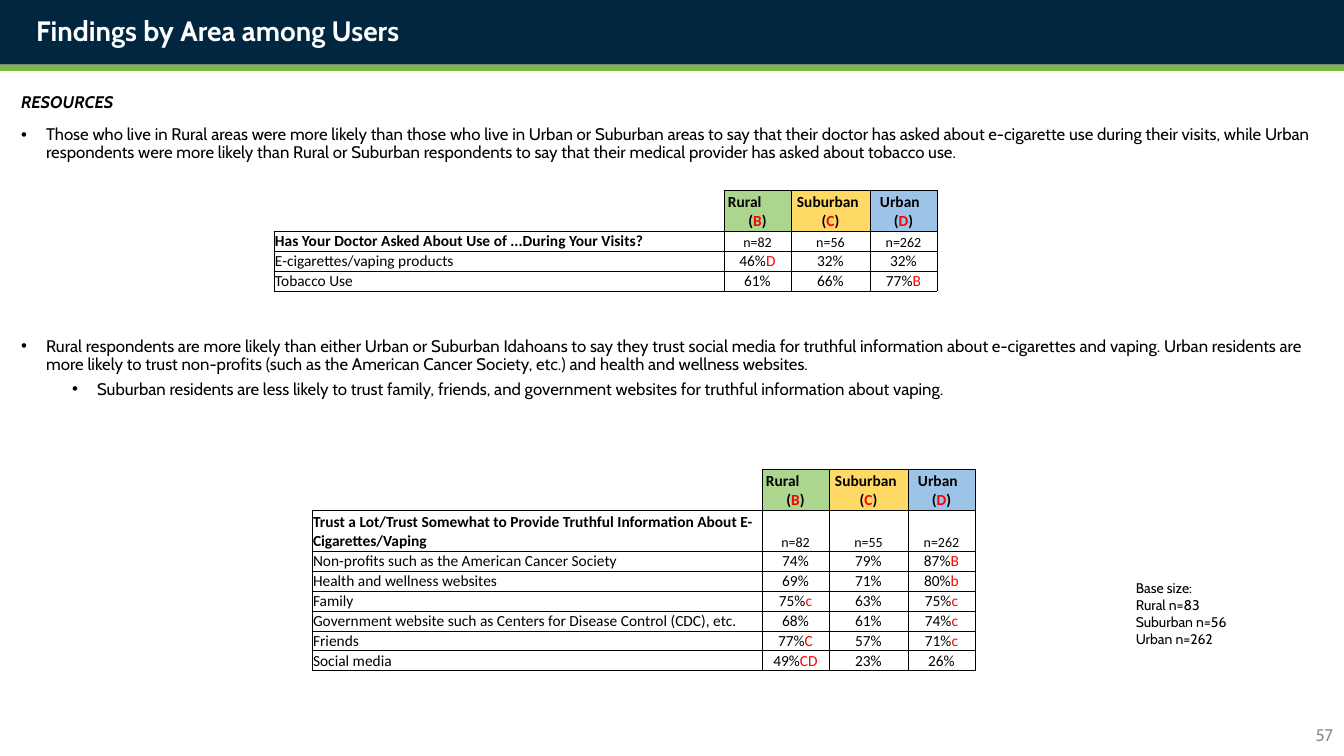
"""Build the "Findings by Area among Users" slide with its two survey tables."""
from lxml import etree
from pptx import Presentation
from pptx.dml.color import RGBColor
from pptx.enum.shapes import MSO_CONNECTOR, MSO_SHAPE
from pptx.enum.text import MSO_ANCHOR, MSO_AUTO_SIZE, PP_ALIGN
from pptx.oxml.ns import qn
from pptx.util import Pt

PX = 9071
LEFT, CENTER, RIGHT = PP_ALIGN.LEFT, PP_ALIGN.CENTER, PP_ALIGN.RIGHT
TOP, MIDDLE, BOTTOM = MSO_ANCHOR.TOP, MSO_ANCHOR.MIDDLE, MSO_ANCHOR.BOTTOM
RECTANGLE, STRAIGHT = MSO_SHAPE.RECTANGLE, MSO_CONNECTOR.STRAIGHT
BLACK, RED = "000000", "FF0000"
COLUMN_WIDTHS = [450, 67, 79, 67]
AREAS = [("Rural", "(|B|)", 3, "ACD68E"), ("Suburban", "(|C|)", 5, "FFD966"), ("Urban", "(|D|)", 9, "9DC3E6")]


def color(hex_value):
    """Turn a hex string into a colour."""
    return RGBColor.from_string(hex_value)


def write(paragraph, text, size, font="Cabin", bold=False, main_color=BLACK, alignment=LEFT):
    """Write text whose parts, split at bars, alternate between the main colour and red."""
    paragraph.alignment = alignment
    for index, part in enumerate(text.split("|")):
        run = paragraph.add_run()
        run.text = part
        run.font.size, run.font.name, run.font.bold = Pt(size), font, bold
        run.font.color.rgb = color(RED if index % 2 else main_color)


presentation = Presentation()
presentation.slide_width, presentation.slide_height = 1344 * PX, 756 * PX
slide = presentation.slides.add_slide(presentation.slide_layouts[1])
title, body = slide.shapes.title, slide.placeholders[1]

for position, (height, band_color) in enumerate([(71, "808080"), (64, "00273F")]):
    band = slide.shapes.add_shape(RECTANGLE, 0, 0, 1344 * PX, height * PX)
    band.shadow.inherit = False
    band.fill.solid()
    band.fill.fore_color.rgb = color(band_color)
    band.line.fill.background()
    slide.shapes._spTree.insert(2 + position, band._element)

title.left, title.top, title.width, title.height = 26 * PX, 8 * PX, 1032 * PX, 44 * PX
title.text_frame.vertical_anchor = TOP
title.text_frame.auto_size = MSO_AUTO_SIZE.NONE
write(title.text_frame.paragraphs[0], "Findings by Area among Users", 20, bold=True, main_color="FFFFFF")

body.left, body.top, body.width, body.height = 11 * PX, 89 * PX, 1323 * PX, 660 * PX
body.text_frame.vertical_anchor = TOP
body.text_frame.auto_size = MSO_AUTO_SIZE.NONE
findings = [
    ("RESOURCES", 0, 0, 0),
    ("Those who live in Rural areas were more likely than those who live in Urban or Suburban areas to say that "
     "their doctor has asked about e-cigarette use during their visits, while Urban respondents were more likely "
     "than Rural or Suburban respondents to say that their medical provider has asked about tobacco use.", 0, 25, 10),
    ("Rural respondents are more likely than either Urban or Suburban Idahoans to say they trust social media for "
     "truthful information about e-cigarettes and vaping. Urban residents are more likely to trust non-profits "
     "(such as the American Cancer Society, etc.) and health and wellness websites.", 0, 25, 125),
    ("Suburban residents are less likely to trust family, friends, and government websites for truthful "
     "information about vaping.", 1, 76, 5),
]
for index, (text, level, margin, space_before) in enumerate(findings):
    paragraph = body.text_frame.add_paragraph() if index else body.text_frame.paragraphs[0]
    paragraph.level = level
    properties = paragraph._p.get_or_add_pPr()
    properties.set("marL", str(margin * PX))
    properties.set("indent", str(-25 * PX if margin else 0))
    if margin:
        etree.SubElement(properties, qn("a:buFont"), typeface="Arial")
        etree.SubElement(properties, qn("a:buChar"), char="•")
    else:
        etree.SubElement(properties, qn("a:buNone"))
    paragraph.line_spacing, paragraph.space_before = 0.9, Pt(space_before)
    write(paragraph, text, 12, bold=not margin)
    paragraph.runs[0].font.italic = not margin

page_number = slide.shapes.add_textbox(1041 * PX, 715 * PX, 302 * PX, 40 * PX)
page_number.text_frame.word_wrap = True
page_number.text_frame.vertical_anchor = MIDDLE
write(page_number.text_frame.paragraphs[0], "57", 12, main_color="8C8C8C", alignment=RIGHT)

green_rule = slide.shapes.add_connector(STRAIGHT, 0, 68 * PX, 1344 * PX, 68 * PX)
green_rule.line.color.rgb = color("75BA43")
green_rule.line.width = Pt(4.5)
etree.SubElement(green_rule._element.spPr, qn("a:effectLst"))

trust_rows = [
    ("Trust a Lot/Trust Somewhat to Provide Truthful Information About E-Cigarettes/Vaping", "n=82", "n=55", "n=262"),
    ("Non-profits such as the American Cancer Society", "74%", "79%", "87%|B"),
    ("Health and wellness websites", "69%", "71%", "80%|b"),
    ("Family", "75%|c", "63%", "75%|c"),
    ("Government website such as Centers for Disease Control (CDC), etc.", "68%", "61%", "74%|c"),
    ("Friends", "77%|C", "57%", "71%|c"),
    ("Social media", "49%|CD", "23%", "26%"),
]
doctor_rows = [
    ("Has Your Doctor Asked About Use of ...During Your Visits?", "n=82", "n=56", "n=262"),
    ("E-cigarettes/vaping products", "46%|D", "32%", "32%"),
    ("Tobacco Use", "61%", "66%", "77%|B"),
]
for left, top, question_height, rows in [(312, 469, 41, trust_rows), (274, 190, 20, doctor_rows)]:
    row_heights = [41, question_height] + [20] * (len(rows) - 1)
    frame = slide.shapes.add_table(len(row_heights), 4, left * PX, top * PX,
                                   sum(COLUMN_WIDTHS) * PX, sum(row_heights) * PX)
    table = frame.table
    table.first_row = table.horz_banding = False
    for column, width in zip(table.columns, COLUMN_WIDTHS):
        column.width = width * PX
    for row, height in zip(table.rows, row_heights):
        row.height = height * PX
    for cell_index, cell in enumerate(table.iter_cells()):
        row_index, column_index = divmod(cell_index, 4)
        cell.vertical_anchor = BOTTOM
        cell.margin_left = cell.margin_right = cell.margin_top = PX
        cell.margin_bottom = 0
        for side in ("lnL", "lnR", "lnT", "lnB"):
            border = etree.SubElement(cell._tc.tcPr, qn("a:" + side), w=str(Pt(0.5)))
            if cell_index == 0 and side in ("lnL", "lnT"):
                etree.SubElement(border, qn("a:noFill"))
            else:
                border_fill = etree.SubElement(border, qn("a:solidFill"))
                etree.SubElement(border_fill, qn("a:srgbClr"), val=BLACK)
        cell.fill.background()
        paragraph = cell.text_frame.paragraphs[0]
        if row_index:
            is_label, is_question = column_index == 0, row_index == 1
            write(paragraph, rows[row_index - 1][column_index], 10 if is_question and not is_label else 11,
                  "Calibri", is_question and is_label, alignment=LEFT if is_label else CENTER)
        elif column_index:
            area, letter, indent, area_color = AREAS[column_index - 1]
            cell.fill.solid()
            cell.fill.fore_color.rgb = color(area_color)
            paragraph._p.get_or_add_pPr().set("marL", str(indent * PX))
            write(paragraph, area, 11, "Calibri", True)
            write(cell.text_frame.add_paragraph(), letter, 11, "Calibri", True, alignment=CENTER)

base_sizes = slide.shapes.add_textbox(1126 * PX, 575 * PX, 135 * PX, 78 * PX)
base_sizes.text_frame.word_wrap = True
for index, text in enumerate(["Base size:", "Rural n=83", "Suburban n=56", "Urban n=262"]):
    paragraph = base_sizes.text_frame.add_paragraph() if index else base_sizes.text_frame.paragraphs[0]
    write(paragraph, text, 10)

presentation.save("out.pptx")
